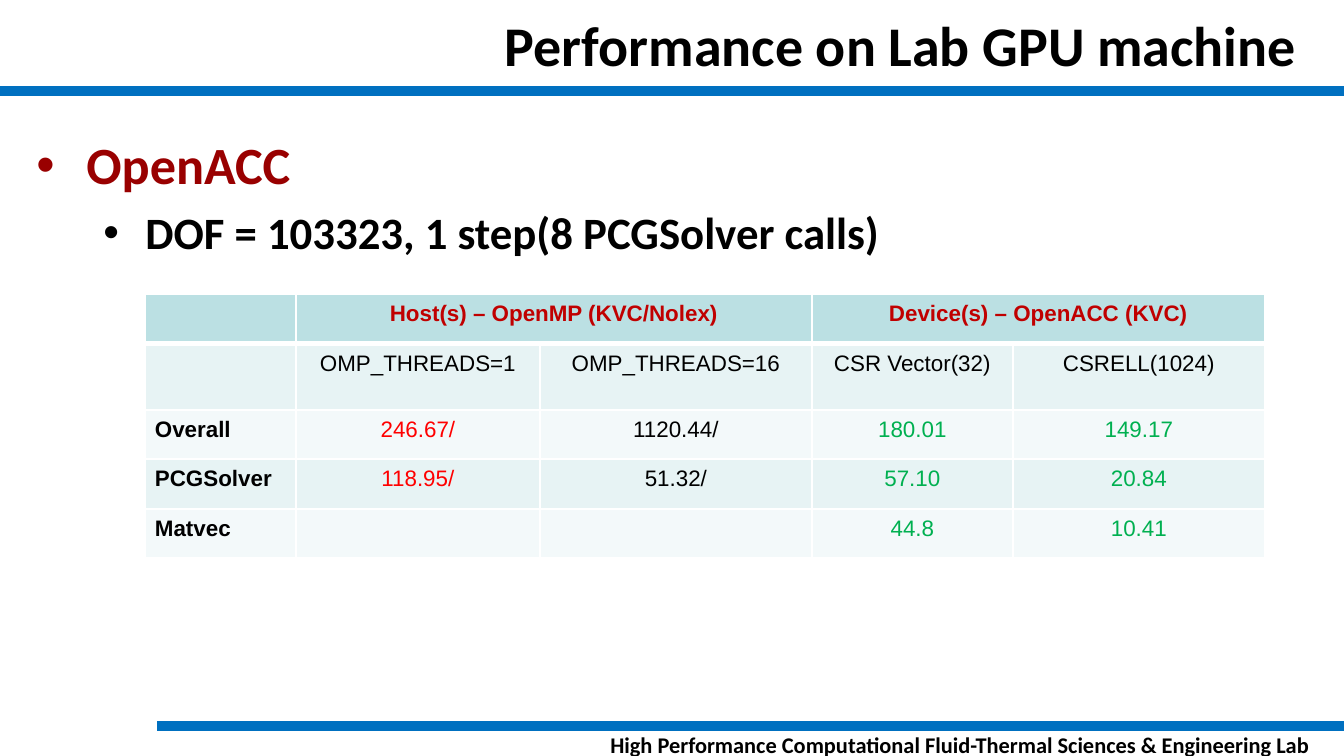
from lxml.etree import SubElement
from pptx import Presentation
from pptx.dml.color import RGBColor
from pptx.enum.shapes import MSO_CONNECTOR as Connector
from pptx.enum.text import MSO_ANCHOR as Anchor, MSO_AUTO_SIZE as AutoSize, PP_ALIGN as Align
from pptx.oxml.ns import qn
from pptx.util import Emu, Pt

BLACK = RGBColor(0x00, 0x00, 0x00)
WHITE = RGBColor(0xFF, 0xFF, 0xFF)
BLUE = RGBColor(0x00, 0x70, 0xC0)
MAROON = RGBColor(0x99, 0x00, 0x00)
CRIMSON = RGBColor(0xC0, 0x00, 0x00)
RED = RGBColor(0xFF, 0x00, 0x00)
GREEN = RGBColor(0x00, 0xB0, 0x50)
HEADER_FILL = RGBColor(0xBB, 0xE0, 0xE3)
DARK_BAND = RGBColor(0xE7, 0xF3, 0xF4)
LIGHT_BAND = RGBColor(0xF3, 0xF9, 0xFA)

PX_PER_INCH = 134.4


def px(length):
    return Emu(round(length * 914400 / PX_PER_INCH))


class LabSlide:
    heading_font = "Calibri"
    table_font = "Arial"
    table_size = 12

    def __init__(self, deck):
        self.slide = deck.slides.add_slide(deck.slide_layouts[1])
        self.shapes = self.slide.shapes

    def style(self, font, name, size, color, bold=True):
        font.name, font.size, font.bold = name, Pt(size), bold
        font.color.rgb = color

    def place(self, shape, left, top, width, height):
        shape.left, shape.top = px(left), px(top)
        shape.width, shape.height = px(width), px(height)

    def title(self, text, box):
        heading = self.shapes.title
        self.place(heading, *box)
        frame = heading.text_frame
        frame.text = text
        frame.auto_size = AutoSize.NONE
        frame.vertical_anchor = Anchor.MIDDLE
        paragraph = frame.paragraphs[0]
        paragraph.alignment = Align.RIGHT
        self.style(paragraph.font, self.heading_font, 30, BLACK)

    def bullets(self, items, box):
        body = self.slide.placeholders[1]
        self.place(body, *box)
        frame = body.text_frame
        frame.text = "\n".join(item[0] for item in items)
        frame.auto_size = AutoSize.NONE
        frame.vertical_anchor = Anchor.TOP
        for paragraph, (_, level, margin, hang, size, color, before) in zip(frame.paragraphs, items):
            paragraph.level = level
            paragraph.space_before = Pt(before)
            properties = paragraph._p.get_or_add_pPr()
            properties.set("marL", str(px(margin)))
            properties.set("indent", str(-px(hang)))
            SubElement(properties, qn("a:buFont"), typeface="Arial")
            SubElement(properties, qn("a:buChar"), char="•")
            self.style(paragraph.font, self.heading_font, size, color)

    def rule(self, start, end, y):
        line = self.shapes.add_connector(Connector.STRAIGHT, px(start), px(y), px(end), px(y))
        line.line.color.rgb = BLUE
        line.line.width = Pt(5)
        SubElement(line._element.spPr, qn("a:effectLst"))

    def footer(self, text, box):
        frame = self.shapes.add_textbox(*map(px, box)).text_frame
        frame.margin_left = frame.margin_top = frame.margin_right = frame.margin_bottom = 0
        frame.word_wrap = True
        frame.text = text
        paragraph = frame.paragraphs[0]
        paragraph.alignment = Align.RIGHT
        self.style(paragraph.font, self.heading_font, 12, BLACK)

    def borders(self, cell, top, bottom):
        properties = cell._tc.get_or_add_tcPr()
        for side, width in (("L", 1), ("R", 1), ("T", top), ("B", bottom)):
            edge = SubElement(properties, qn(f"a:ln{side}"), w=str(Pt(width)))
            fill = SubElement(edge, qn("a:solidFill"))
            SubElement(fill, qn("a:srgbClr"), val=str(WHITE))

    def cell(self, cell, text, fill, color, bold, align, top, bottom):
        cell.margin_left = cell.margin_right = px(10)
        cell.margin_top = cell.margin_bottom = px(7)
        self.borders(cell, top, bottom)
        cell.fill.solid()
        cell.fill.fore_color.rgb = fill
        paragraph = cell.text_frame.paragraphs[0]
        if text:
            paragraph.alignment = align
            # Run fonts take precedence over the table style
            entry = paragraph.add_run()
            entry.text = text
            self.style(entry.font, self.table_font, self.table_size, color, bold)
        else:
            # An empty cell must not stretch its row
            SubElement(paragraph._p, qn("a:endParaRPr"), sz=str(self.table_size * 100))

    def timings(self, rows, colors, left, top, widths, heights):
        table = self.shapes.add_table(len(rows), len(widths), px(left), px(top),
                                      px(sum(widths)), px(sum(heights))).table
        for column, width in zip(table.columns, widths):
            column.width = px(width)
        for row, height in zip(table.rows, heights):
            row.height = px(height)
        for r, texts in enumerate(rows):
            fill = HEADER_FILL if r == 0 else DARK_BAND if r % 2 else LIGHT_BAND
            for c, text in enumerate(texts):
                color = CRIMSON if r == 0 else colors[c] if r > 1 else BLACK
                self.cell(table.cell(r, c), text, fill, color,
                          bold=r == 0 or c == 0,
                          align=Align.CENTER if c else Align.LEFT,
                          top=3 if r == 1 else 1, bottom=3 if r == 0 else 1)
        # Each group heading spans two columns
        for c in (1, 3):
            table.cell(0, c).merge(table.cell(0, c + 1))


def main():
    deck = Presentation()
    deck.slide_width, deck.slide_height = px(1344), px(756)
    page = LabSlide(deck)

    # Frame: footer and blue rules
    page.footer("High Performance Computational Fluid-Thermal Sciences & Engineering Lab",
                (589, 731, 721, 27))
    page.rule(1344, 157, 726)
    page.rule(0, 1344, 91)

    # Title and list: text, level, margin, hanging indent, size, color, space before
    page.title("Performance on Lab GPU machine", (23, 4, 1287, 81))
    page.bullets([
        ("OpenACC", 0, 50, 50, 28, MAROON, 0),
        ("DOF = 103323, 1 step(8 PCGSolver calls)", 1, 109, 42, 24, BLACK, 5),
    ], (23, 126, 1287, 554))

    # Table of timings
    timings = [
        ("", "Host(s) – OpenMP (KVC/Nolex)", "", "Device(s) – OpenACC (KVC)", ""),
        ("", "OMP_THREADS=1", "OMP_THREADS=16", "CSR Vector(32)", "CSRELL(1024)"),
        ("Overall", "246.67/", "1120.44/", "180.01", "149.17"),
        ("PCGSolver", "118.95/", "51.32/", "57.10", "20.84"),
        ("Matvec", "", "", "44.8", "10.41"),
    ]
    page.timings(timings, (BLACK, RED, BLACK, GREEN, GREEN), 145, 294,
                 widths=(151, 244, 272, 201, 252), heights=(50, 66, 49, 50, 49))

    deck.save("out.pptx")


if __name__ == "__main__":
    main()
